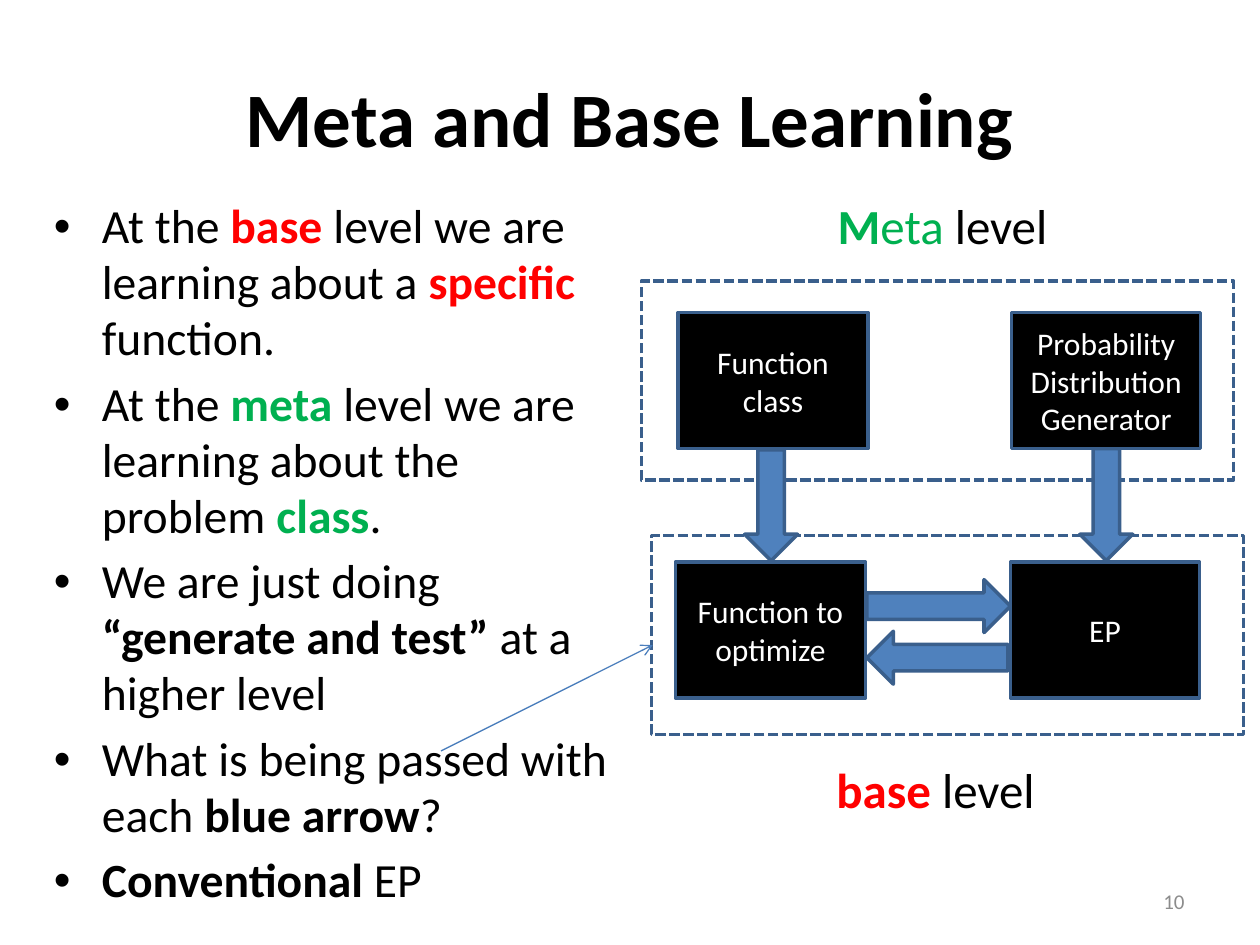
from lxml import etree
from pptx import Presentation
from pptx.dml.color import RGBColor
from pptx.enum import dml, shapes, text
from pptx.oxml import ns
from pptx.util import Inches, Pt

BLACK, WHITE, RED, GREEN = "000000", "FFFFFF", "FF0000", "00B050"
BLUE, OUTLINE, THIN_LINE, GREY = "4F81BD", "3A5F8C", "4B7EBC", "8C8C8C"


def color(value):
    return RGBColor.from_string(value)


def write(shape, paragraphs, size=18, align=text.PP_ALIGN.LEFT,
          anchor=text.MSO_ANCHOR.TOP, wrap=True, bullet=False):
    frame = shape.text_frame
    frame.word_wrap = wrap
    frame.vertical_anchor = anchor
    for index, runs in enumerate(paragraphs):
        paragraph = frame.add_paragraph() if index else frame.paragraphs[0]
        paragraph.alignment = align
        for words, shade, bold in runs:
            run = paragraph.add_run()
            run.text = words
            run.font.name = "Calibri"
            run.font.size = Pt(size)
            run.font.bold = bold
            run.font.color.rgb = color(shade)
        if bullet:
            paragraph.space_before = Pt(size * 0.2)
            paragraph.line_spacing = 0.98
            properties = paragraph._p.get_or_add_pPr()
            properties.set("marL", str(Inches(0.38)))
            properties.set("indent", str(-Inches(0.38)))
            font = etree.SubElement(properties, ns.qn("a:buFont"))
            font.set("typeface", "Arial")
            mark = etree.SubElement(properties, ns.qn("a:buChar"))
            mark.set("char", "•")


presentation = Presentation()
presentation.slide_width = Inches(10)
presentation.slide_height = Inches(7.5)
slide = presentation.slides.add_slide(presentation.slide_layouts[6])

for left, top in [(5.09, 2.23), (5.17, 4.25)]:
    frame = slide.shapes.add_shape(
        shapes.MSO_SHAPE.RECTANGLE, Inches(left), Inches(top), Inches(4.7), Inches(1.58))
    frame.shadow.inherit = False
    frame.fill.background()
    frame.line.color.rgb = color(OUTLINE)
    frame.line.width = Pt(2)
    frame.line.dash_style = dml.MSO_LINE.SQUARE_DOT

title = slide.shapes.add_textbox(Inches(0.5), Inches(0.3), Inches(9), Inches(1.25))
write(title, [[("Meta and Base Learning", BLACK, True)]], size=44,
      align=text.PP_ALIGN.CENTER, anchor=text.MSO_ANCHOR.MIDDLE)

body = slide.shapes.add_textbox(Inches(0.33), Inches(1.53), Inches(4.75), Inches(4.93))
write(body, [
    [("At the ", BLACK, False), ("base ", RED, True),
     ("level we are learning about a ", BLACK, False),
     ("specific ", RED, True), ("function.", BLACK, False)],
    [("At the ", BLACK, False), ("meta ", GREEN, True),
     ("level we are learning about the problem ", BLACK, False),
     ("class", GREEN, True), (".", BLACK, False)],
    [("We are just doing ", BLACK, False), ("“generate and test” ", BLACK, True),
     ("at a higher level", BLACK, False)],
    [("What is being passed with each ", BLACK, False),
     ("blue arrow", BLACK, True), ("?", BLACK, False)],
    [("Conventional", BLACK, True), (" EP", BLACK, False)],
], size=27.2, bullet=True)

pointer = slide.shapes.add_connector(
    shapes.MSO_CONNECTOR.STRAIGHT, Inches(3.5), Inches(5.96), Inches(5.18), Inches(5.12))
pointer.line.color.rgb = color(THIN_LINE)
pointer.line.width = Pt(0.75)
etree.SubElement(pointer.line._get_or_add_ln(), ns.qn("a:tailEnd")).set("type", "arrow")
etree.SubElement(pointer._element.spPr, ns.qn("a:effectLst"))

arrow, box = shapes.MSO_SHAPE.DOWN_ARROW, shapes.MSO_SHAPE.RECTANGLE
for kind, left, top, width, height, rotation, lines in [
    (arrow, 8.57, 3.56, 0.42, 0.89, 0, []),
    (box, 8.02, 4.46, 1.5, 1.08, 0, ["EP"]),
    (box, 5.36, 4.46, 1.51, 1.08, 0, ["Function to optimize"]),
    (arrow, 7.23, 4.66, 0.42, 1.12, 90, []),
    (arrow, 7.24, 4.24, 0.42, 1.14, 270, []),
    (arrow, 5.91, 3.57, 0.42, 0.88, 0, []),
    (box, 8.03, 2.48, 1.5, 1.08, 0, ["Probability", "Distribution", "Generator"]),
    (box, 5.38, 2.48, 1.51, 1.08, 0, ["Function class"]),
]:
    shape = slide.shapes.add_shape(
        kind, Inches(left), Inches(top), Inches(width), Inches(height))
    shape.rotation = rotation
    shape.shadow.inherit = False
    shape.fill.solid()
    shape.fill.fore_color.rgb = color(BLUE if kind == arrow else BLACK)
    shape.line.color.rgb = color(OUTLINE)
    shape.line.width = Pt(2)
    write(shape, [[(line, WHITE, False)] for line in lines],
          align=text.PP_ALIGN.CENTER, anchor=text.MSO_ANCHOR.MIDDLE)

for left, top, width, runs in [
    (6.54, 5.98, 1.79, [("base ", RED, True), ("level", BLACK, False)]),
    (6.55, 1.5, 1.88, [("M", GREEN, True), ("eta", GREEN, False), (" level", BLACK, False)]),
]:
    label = slide.shapes.add_textbox(Inches(left), Inches(top), Inches(width), Inches(0.57))
    write(label, [runs], size=28, wrap=False)

number = slide.shapes.add_textbox(Inches(7.17), Inches(6.95), Inches(2.33), Inches(0.4))
write(number, [[("10", GREY, False)]], size=12,
      align=text.PP_ALIGN.RIGHT, anchor=text.MSO_ANCHOR.MIDDLE)

presentation.save("out.pptx")
